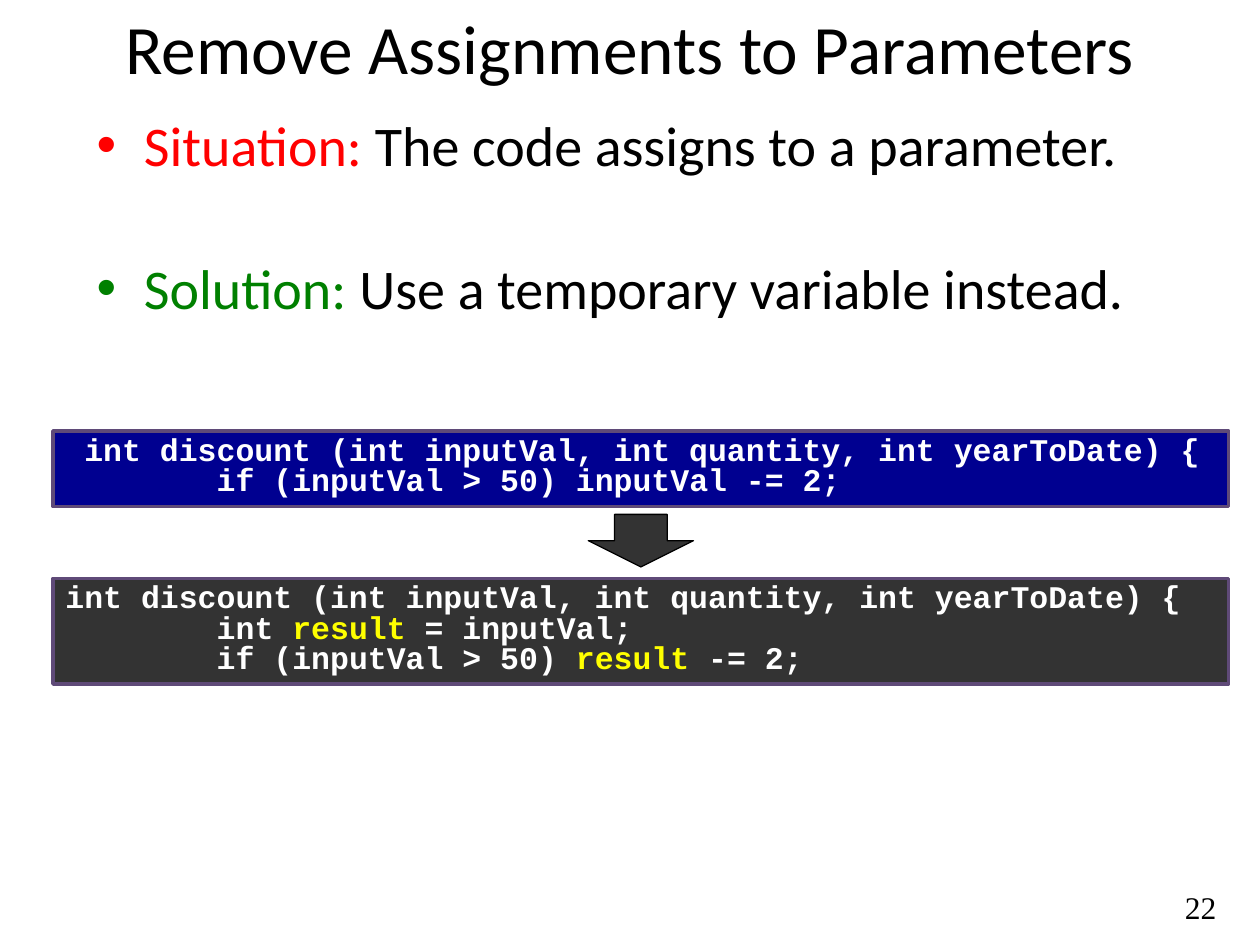
from lxml import etree
from pptx import Presentation
from pptx.dml.color import RGBColor
from pptx.enum.shapes import MSO_SHAPE
from pptx.enum.text import MSO_ANCHOR, PP_ALIGN
from pptx.oxml.ns import qn
from pptx.util import Cm, Pt

RECT, DOWN_ARROW = MSO_SHAPE.RECTANGLE, MSO_SHAPE.DOWN_ARROW
TOP, MIDDLE = MSO_ANCHOR.TOP, MSO_ANCHOR.MIDDLE
LEFT, CENTER, RIGHT = PP_ALIGN.LEFT, PP_ALIGN.CENTER, PP_ALIGN.RIGHT

BLACK, WHITE, YELLOW = "000000", "FFFFFF", "FFFF00"
NAVY, GRAY, PURPLE = "000090", "333333", "5F4A78"
RED, GREEN = "FF0000", "008000"

TITLE_FONT = {"name": "Calibri", "size": Pt(39.6)}
BODY_FONT = {"name": "Calibri", "size": Pt(32)}
CODE_FONT = {"name": "Courier New", "size": Pt(18), "bold": True}
NUMBER_FONT = {"name": "Times New Roman", "size": Pt(18)}

CODE_LEFT, CODE_WIDTH = 1.07, 23.7
CODE_INDENT = 3.05  # eight characters of code


def color(value):
    return RGBColor.from_string(value)


def add_runs(p, runs, font, **layout):
    """Fill a paragraph with (text, colour) runs and set its layout."""
    for name, value in layout.items():
        setattr(p, name, value)
    for text, value in runs:
        r = p.add_run()
        r.text = text
        for name, setting in font.items():
            setattr(r.font, name, setting)
        r.font.color.rgb = color(value)


def next_paragraph(tf, i):
    return tf.paragraphs[0] if i == 0 else tf.add_paragraph()


def set_indent(p, margin, first=0.0):
    pPr = p._p.get_or_add_pPr()
    pPr.set("marL", str(Cm(margin)))
    pPr.set("indent", str(Cm(first)))
    return pPr


def add_title(s, text):
    title = s.shapes.title
    box = {"left": Cm(1.27), "top": Cm(-0.64), "width": Cm(22.86), "height": Cm(3.18)}
    for name, value in box.items():
        setattr(title, name, value)
    tf = title.text_frame
    tf.vertical_anchor = MIDDLE
    add_runs(tf.paragraphs[0], [(text, BLACK)], TITLE_FONT, alignment=CENTER)


def add_text_box(s, left, top, width, height):
    tf = s.shapes.add_textbox(Cm(left), Cm(top), Cm(width), Cm(height)).text_frame
    tf.word_wrap = True
    return tf


def add_bullets(s, items):
    tf = add_text_box(s, 1.7, 2.11, 23.5, 15.88)
    for i, (runs, space) in enumerate(items):
        p = next_paragraph(tf, i)
        add_runs(p, runs, BODY_FONT, space_before=Pt(space))
        pPr = set_indent(p, 0.95, -0.95)
        etree.SubElement(pPr, qn("a:buFont")).set("typeface", "Arial")
        etree.SubElement(pPr, qn("a:buChar")).set("char", "•")


def add_block(s, kind, left, top, width, height, fill, line, weight):
    sp = s.shapes.add_shape(kind, Cm(left), Cm(top), Cm(width), Cm(height))
    sp.shadow.inherit = False
    sp.fill.solid()
    sp.fill.fore_color.rgb = color(fill)
    sp.line.color.rgb = color(line)
    sp.line.width = Pt(weight)
    return sp


def add_code(s, top, height, fill, lines):
    """Add a code box: a signature, then indented statements."""
    sp = add_block(s, RECT, CODE_LEFT, top, CODE_WIDTH, height, fill, PURPLE, 2)
    tf = sp.text_frame
    tf.word_wrap = True
    tf.vertical_anchor = TOP
    for i, runs in enumerate(lines):
        p = next_paragraph(tf, i)
        add_runs(p, runs, CODE_FONT, alignment=LEFT, line_spacing=0.8)
        set_indent(p, CODE_INDENT if i else 0)


def main():
    prs = Presentation()
    prs.slide_width, prs.slide_height = Cm(25.4), Cm(19.05)
    s = prs.slides.add_slide(prs.slide_layouts[5])

    # Slide number
    tf = add_text_box(s, 18.85, 17.78, 5.92, 1.02)
    add_runs(tf.paragraphs[0], [("22", BLACK)], NUMBER_FONT, alignment=RIGHT)

    # Title and explanation
    add_title(s, "Remove Assignments to Parameters")
    add_bullets(s, [
        ([("Situation:", RED), (" The code assigns to a parameter.", BLACK)], 4),
        ([("Solution:", GREEN), (" Use a temporary variable instead.", BLACK)], 43),
    ])

    # Code before and after, with an arrow between
    signature = "int discount (int inputVal, int quantity, int yearToDate) {"
    add_code(s, 8.69, 1.52, NAVY, [
        [(" " + signature, WHITE)],
        [("if (inputVal > 50) inputVal -= 2;", WHITE)],
    ])
    add_code(s, 11.66, 2.13, GRAY, [
        [(signature, WHITE)],
        [("int ", WHITE), ("result ", YELLOW), ("= inputVal;", WHITE)],
        [("if (inputVal > 50) ", WHITE), ("result ", YELLOW), ("-= 2;", WHITE)],
    ])
    add_block(s, DOWN_ARROW, 11.86, 10.37, 2.12, 1.06, GRAY, BLACK, 0.75)

    prs.save("out.pptx")


if __name__ == "__main__":
    main()
